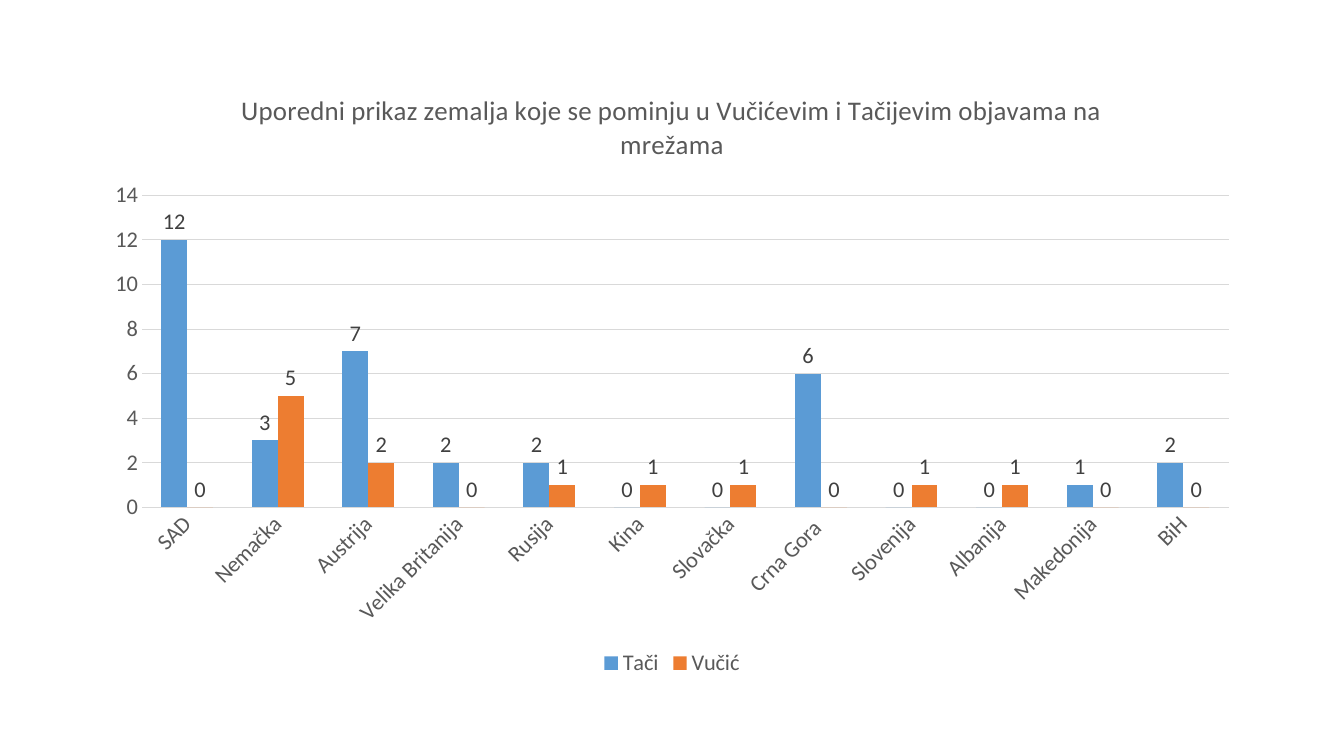
from pptx import Presentation
from pptx.chart.data import CategoryChartData
from pptx.dml.color import RGBColor
from pptx.enum.chart import XL_CHART_TYPE, XL_LABEL_POSITION, XL_LEGEND_POSITION, XL_TICK_MARK
from pptx.util import Inches, Pt

CLUSTERED = XL_CHART_TYPE.COLUMN_CLUSTERED
OUTSIDE_END = XL_LABEL_POSITION.OUTSIDE_END
BOTTOM = XL_LEGEND_POSITION.BOTTOM
NO_TICK = XL_TICK_MARK.NONE

# Content
TITLE = "Uporedni prikaz zemalja koje se pominju u Vučićevim i Tačijevim objavama na mrežama"
MENTIONS = [  # country, Tači, Vučić
    ("SAD", 12, 0),
    ("Nemačka", 3, 5),
    ("Austrija", 7, 2),
    ("Velika Britanija", 2, 0),
    ("Rusija", 2, 1),
    ("Kina", 0, 1),
    ("Slovačka", 0, 1),
    ("Crna Gora ", 6, 0),
    ("Slovenija", 0, 1),
    ("Albanija", 0, 1),
    ("Makedonija", 1, 0),
    ("BiH", 2, 0),
]
AUTHORS = ["Tači", "Vučić"]
COLORS = {"Tači": "5B9BD5", "Vučić": "ED7D31", "text": "595959", "label": "404040", "grid": "D9D9D9"}
FONT = "Calibri"
TEXT_SIZE, TITLE_SIZE = 16, 19.2
SLIDE_WIDTH, SLIDE_HEIGHT = Inches(13.33), Inches(7.5)


def color(name):
    return RGBColor.from_string(COLORS[name])


def style_font(font, color_name="text", size=TEXT_SIZE):
    font.name = FONT
    font.size = Pt(size)
    font.bold = False
    font.color.rgb = color(color_name)


# Slide
deck = Presentation()
deck.slide_width, deck.slide_height = SLIDE_WIDTH, SLIDE_HEIGHT
page = deck.slides.add_slide(deck.slide_layouts[6])

# Chart, centred across the slide
data = CategoryChartData()
countries, *counts = zip(*MENTIONS)
data.categories = countries
for author, values in zip(AUTHORS, counts):
    data.add_series(author, values)
width, height = Inches(11.5), Inches(6.08)
left = (SLIDE_WIDTH - width) // 2
chart = page.shapes.add_chart(CLUSTERED, left, Inches(0.68), width, height, data).chart
style_font(chart.font)

# Title
chart.has_title = True
title_frame = chart.chart_title.text_frame
title_frame.text = TITLE
style_font(title_frame.paragraphs[0].runs[0].font, size=TITLE_SIZE)
chart.chart_title.include_in_layout = False

# Legend
chart.has_legend = True
chart.legend.position = BOTTOM
chart.legend.include_in_layout = False
style_font(chart.legend.font)

# Axes
for axis in (chart.category_axis, chart.value_axis):
    axis.major_tick_mark = axis.minor_tick_mark = NO_TICK
    axis.format.line.fill.background()
    style_font(axis.tick_labels.font)
# Slanted country names
chart.category_axis.tick_labels.font
chart.category_axis._element.txPr.bodyPr.set("rot", "-2700000")
value_axis = chart.value_axis
value_axis.minimum_scale, value_axis.maximum_scale, value_axis.major_unit = 0, 14, 2
value_axis.has_major_gridlines = True
grid_line = value_axis.major_gridlines.format.line
grid_line.color.rgb = color("grid")
grid_line.width = Pt(0.75)

# Columns and value labels
plot = chart.plots[0]
plot.gap_width = 150
plot.overlap = 0
plot.vary_by_categories = False
for series in plot.series:
    series.format.fill.solid()
    series.format.fill.fore_color.rgb = color(series.name)
    labels = series.data_labels
    labels.show_value = True
    labels.position = OUTSIDE_END
    style_font(labels.font, "label")

deck.save("out.pptx")
